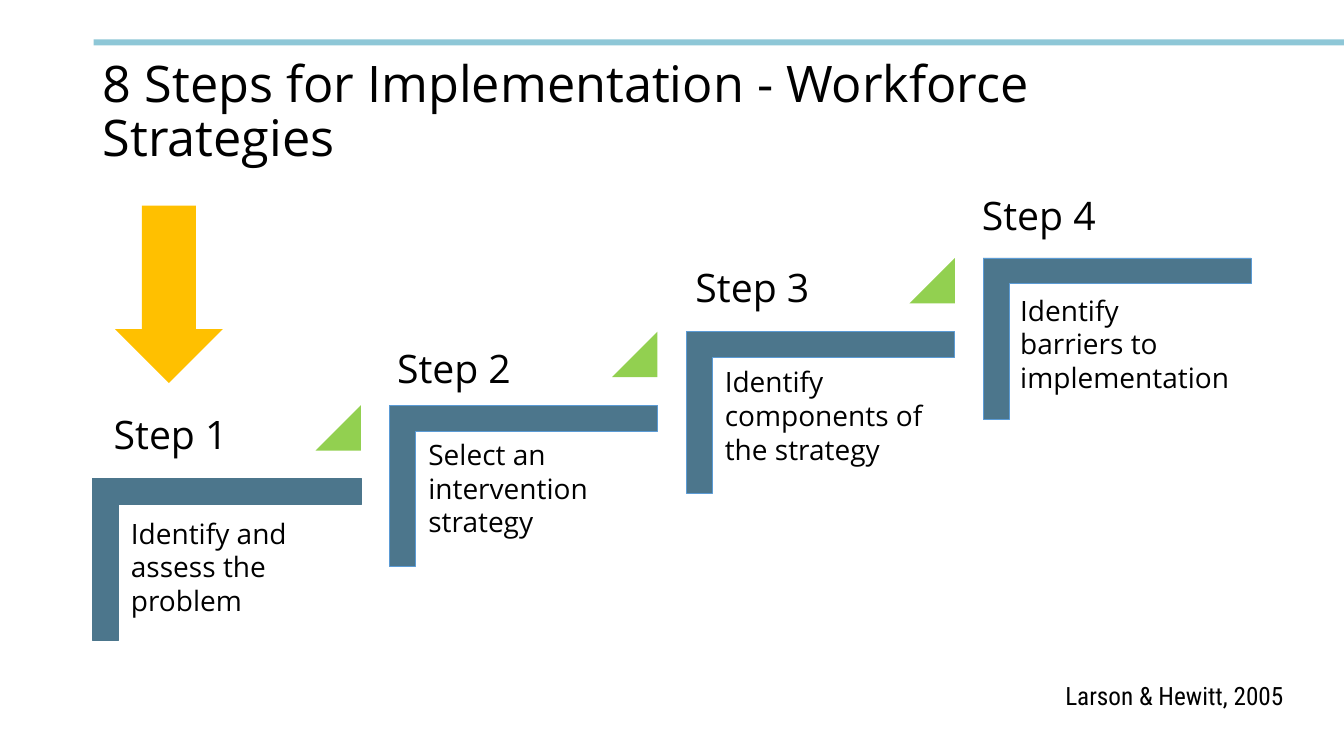
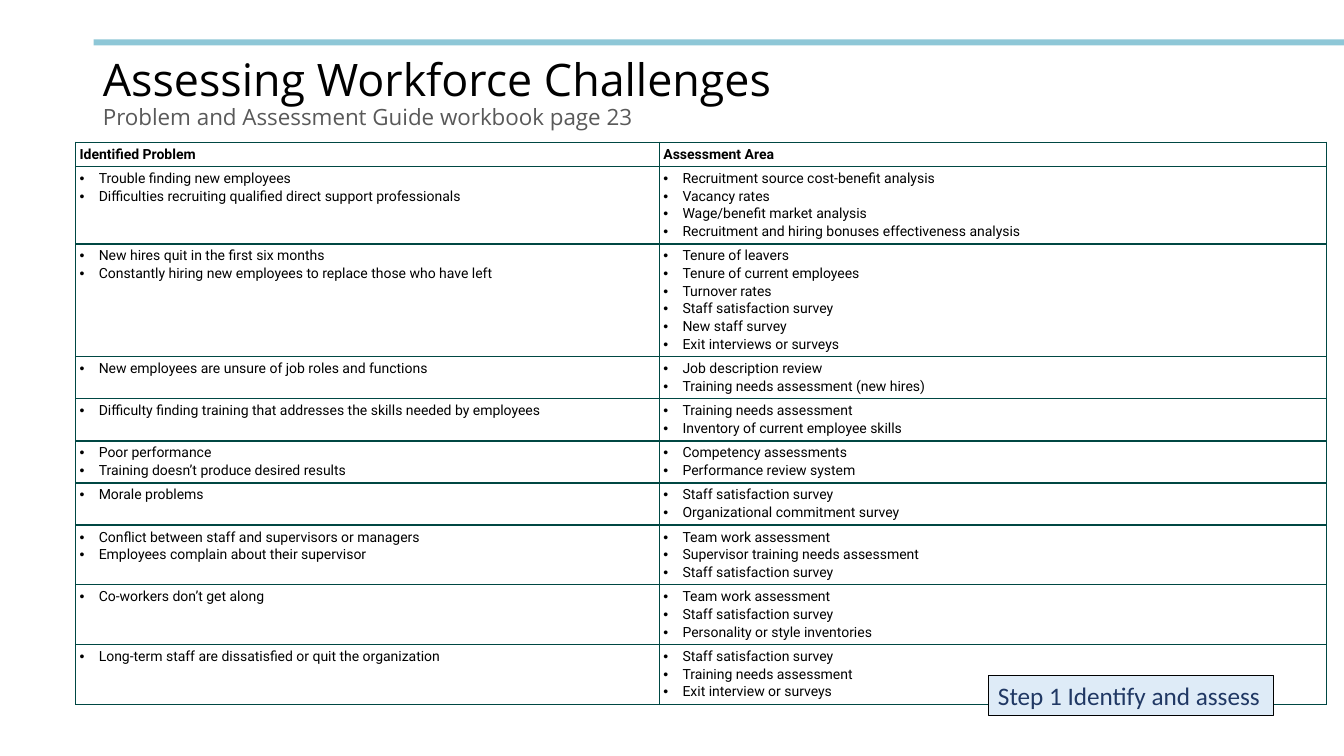
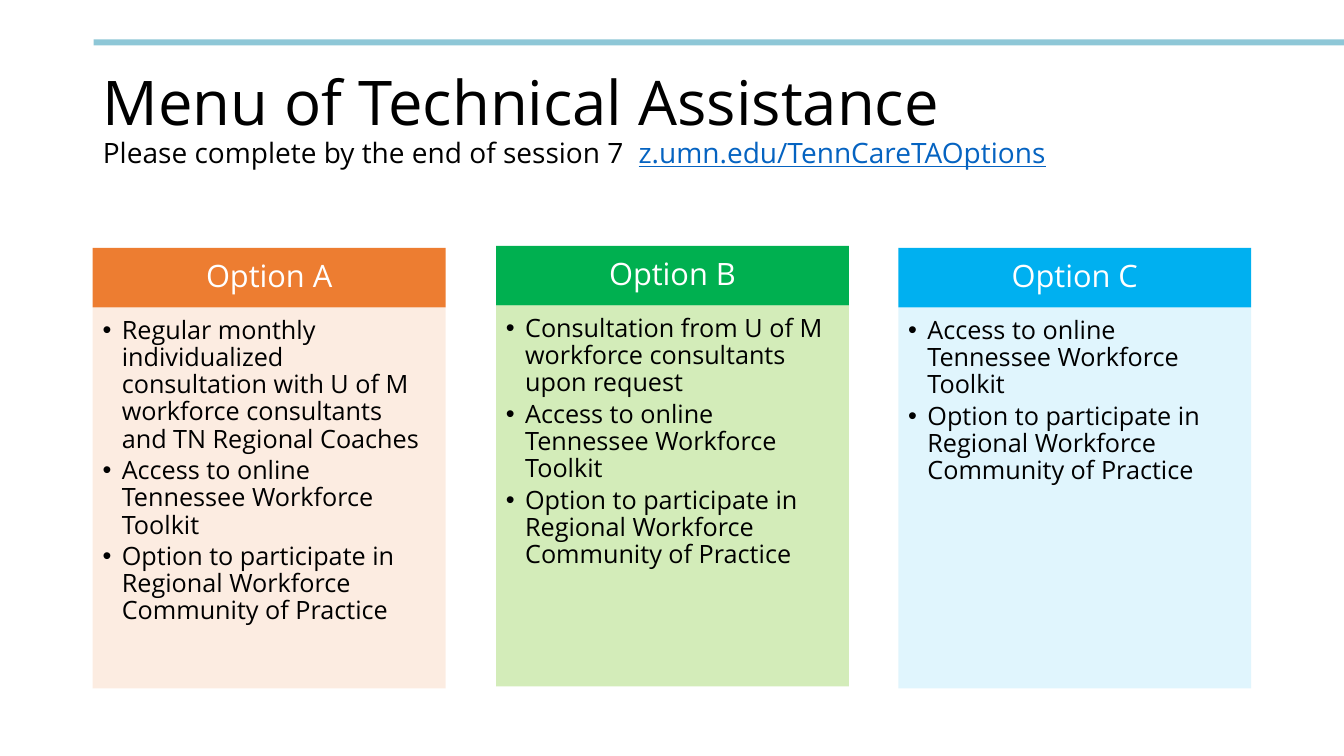
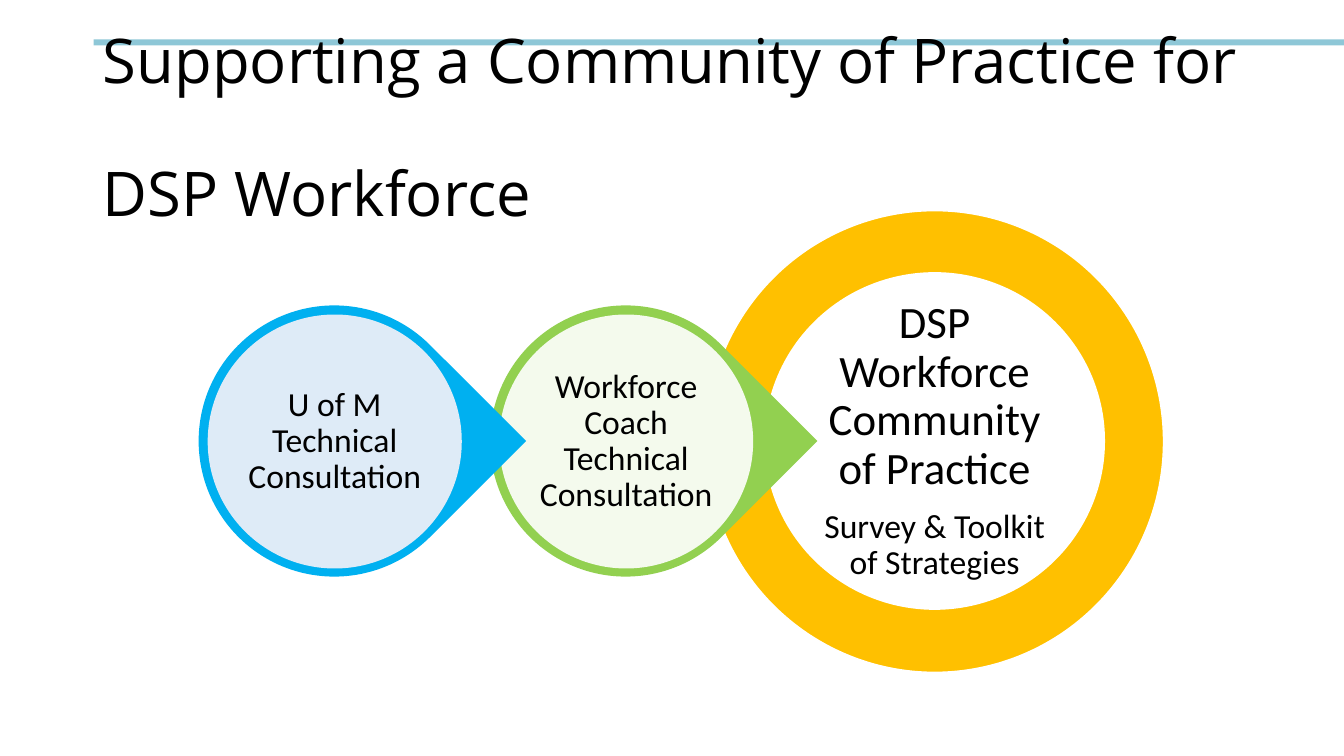
import copy

import lxml.etree
import pptx
import pptx.dml.color
import pptx.enum.shapes
import pptx.enum.text
import pptx.oxml.ns
import pptx.util

RGB = pptx.dml.color.RGBColor
SHAPE = pptx.enum.shapes.MSO_SHAPE
ALIGN = pptx.enum.text.PP_ALIGN
ANCHOR = pptx.enum.text.MSO_ANCHOR
Pt = pptx.util.Pt
qn = pptx.oxml.ns.qn

EMU_PER_PX = 9144

BLACK = RGB(0x00, 0x00, 0x00)
WHITE = RGB(0xFF, 0xFF, 0xFF)
GREY = RGB(0x59, 0x59, 0x59)
BAND_BLUE = RGB(0x8E, 0xC7, 0xD7)
STEP_BLUE = RGB(0x4C, 0x76, 0x8C)
EDGE_BLUE = RGB(0x5B, 0x9B, 0xD5)
LINK_BLUE = RGB(0x05, 0x63, 0xC1)
PALE_BLUE = RGB(0xDE, 0xEB, 0xF7)
NAVY = RGB(0x20, 0x38, 0x64)
SKY = RGB(0x00, 0xB0, 0xF0)
LIME = RGB(0x92, 0xD0, 0x50)
GREEN = RGB(0x00, 0xB0, 0x50)
ORANGE = RGB(0xED, 0x7D, 0x31)
GOLD = RGB(0xFF, 0xC0, 0x00)
TABLE_GREEN = RGB(0x00, 0x47, 0x43)

STEPS = [  # label, label place, text, text box
    ("Step 1", (103, 402), "Identify and assess the problem", (120, 507, 229)),
    ("Step 2", (384, 337), "Select an intervention strategy", (415, 429, 229)),
    ("Step 3", (680, 256), "Identify components of the strategy", (709, 357, 250)),
    ("Step 4", (964, 185), "Identify \nbarriers to implementation", (1002, 286, 239)),
]

ASSESSMENTS = [  # row height, problems, assessment areas
    (74, ["Trouble finding new employees",
          "Difficulties recruiting qualified direct support professionals"],
     ["Recruitment source cost-benefit analysis", "Vacancy rates",
      "Wage/benefit market analysis",
      "Recruitment and hiring bonuses effectiveness analysis"]),
    (108, ["New hires quit in the first six months",
           "Constantly hiring new employees to replace those who have left"],
     ["Tenure of leavers", "Tenure of current employees", "Turnover rates",
      "Staff satisfaction survey", "New staff survey", "Exit interviews or surveys"]),
    (40, ["New employees are unsure of job roles and functions"],
     ["Job description review", "Training needs assessment (new hires)"]),
    (40, ["Difficulty finding training that addresses the skills needed by employees"],
     ["Training needs assessment", "Inventory of current employee skills"]),
    (40, ["Poor performance", "Training doesn’t produce desired results"],
     ["Competency assessments", "Performance review system"]),
    (40, ["Morale problems"],
     ["Staff satisfaction survey", "Organizational commitment survey"]),
    (40, ["Conflict between staff and supervisors or managers",
          "Employees complain about their supervisor"],
     ["Team work assessment", "Supervisor training needs assessment",
      "Staff satisfaction survey"]),
    (57, ["Co-workers don’t get along"],
     ["Team work assessment", "Staff satisfaction survey",
      "Personality or style inventories"]),
    (57, ["Long-term staff are dissatisfied or quit the organization"],
     ["Staff satisfaction survey", "Training needs assessment",
      "Exit interview or surveys"]),
]

TOOLKIT = "Access to online Tennessee Workforce Toolkit"
COMMUNITY = "Option to participate in Regional Workforce Community of Practice"
OPTIONS = [  # heading, top, heading fill, body fill, body opacity, bullets
    ("Option A", 246, ORANGE, ORANGE, 14,
     ["Regular monthly individualized consultation with U of M workforce "
      "consultants and TN Regional Coaches", TOOLKIT, COMMUNITY]),
    ("Option B", 244, GREEN, LIME, 40,
     ["Consultation from U of M workforce consultants upon request",
      TOOLKIT, COMMUNITY]),
    ("Option C", 246, SKY, SKY, 12, [TOOLKIT, COMMUNITY]),
]


def px(length):
    return pptx.util.Emu(round(length * EMU_PER_PX))


def add_bullet(para):
    props = para._p.get_or_add_pPr()
    props.set("marL", str(px(19)))
    props.set("indent", str(px(-19)))
    lxml.etree.SubElement(props, qn("a:buFont"), typeface="Arial")
    lxml.etree.SubElement(props, qn("a:buChar"), char="•")


def add_span(para, text, size, font="Open Sans", color=BLACK, bold=False,
             underline=False):
    for number, line in enumerate(text.split("\n")):
        if number:
            para.add_line_break()
            # A break takes the format of the text before it.
            line_break = para._p[-1]
            line_break.append(copy.deepcopy(line_break.getprevious().find(qn("a:rPr"))))
        if line:
            span = para.add_run()
            span.text = line
            span.font.size = Pt(size)
            span.font.name = font
            span.font.color.rgb = color
            span.font.bold = bold
            span.font.underline = underline


def write(frame, paras, align=ALIGN.LEFT, anchor=ANCHOR.TOP, insets=(10, 5, 10, 5),
          line=1.0, after=0, bullet=False, wrap=True, **style):
    """Fill a frame; a paragraph is a text or a list of (text, style) spans."""
    frame.auto_size = pptx.enum.text.MSO_AUTO_SIZE.NONE
    frame.word_wrap = wrap
    frame.vertical_anchor = anchor
    (frame.margin_left, frame.margin_top,
     frame.margin_right, frame.margin_bottom) = map(px, insets)
    write_paras(frame, paras, align, line, after, bullet, **style)


def write_paras(frame, paras, align=ALIGN.LEFT, line=1.0, after=0, bullet=False, **style):
    for number, spans in enumerate(paras):
        para = frame.add_paragraph() if number else frame.paragraphs[0]
        if bullet:
            add_bullet(para)
        para.alignment = align
        para.line_spacing = line
        para.space_after = Pt(after if number < len(paras) - 1 else 0)
        for text, changes in [(spans, {})] if isinstance(spans, str) else spans:
            add_span(para, text, **{**style, **changes})


def add_box(page, kind, left, top, width, height, fill, opacity=100, edge=None,
            edge_width=1, turn=0, adjust=()):
    box = page.shapes.add_shape(kind, px(left), px(top), px(width), px(height))
    box.shadow.inherit = False
    box.rotation = turn
    for number, value in enumerate(adjust):
        box.adjustments[number] = value
    box.fill.solid()
    box.fill.fore_color.rgb = fill
    if opacity < 100:
        color = box.element.spPr.find(qn("a:solidFill"))[0]
        lxml.etree.SubElement(color, qn("a:alpha"), val=str(opacity * 1000))
    if edge is None:
        box.line.fill.background()
    else:
        box.line.color.rgb = edge
        box.line.width = Pt(edge_width)
    return box


def add_text(page, text, left, top, width, height, **style):
    box = page.shapes.add_textbox(px(left), px(top), px(width), px(height))
    write(box.text_frame, [text], **style)


def add_page(deck, title, top, height, size, width=1150):
    page = deck.slides.add_slide(deck.slide_layouts.get_by_name("Title Only"))
    box = page.shapes.title
    box.left, box.top, box.width, box.height = map(px, (92, top, width, height))
    write(box.text_frame, [title], anchor=ANCHOR.MIDDLE, line=0.9, size=size)
    return page


def share_band(page):
    """Put the top band on the layout that all pages use."""
    band = add_box(page, SHAPE.RECTANGLE, 93, 39, 1240, 6, BAND_BLUE)
    page.slide_layout.shapes.element.append(band.element)


def style_cell(cell, paras, **style):
    props = cell._tc.get_or_add_tcPr()
    for side in ("lnL", "lnR", "lnT", "lnB"):
        line = lxml.etree.SubElement(props, qn(f"a:{side}"), w=str(Pt(1)))
        fill = lxml.etree.SubElement(line, qn("a:solidFill"))
        lxml.etree.SubElement(fill, qn("a:srgbClr"), val=str(TABLE_GREEN))
    cell.fill.background()
    cell.margin_left = cell.margin_top = cell.margin_right = cell.margin_bottom = px(4)
    write_paras(cell.text_frame, paras, size=10, font="Roboto", **style)


def add_assessment_table(page):
    frame = page.shapes.add_table(len(ASSESSMENTS) + 1, 2,
                                  px(75), px(141), px(1241), px(519))
    table = frame.table
    table.horz_banding = False
    for column, width in zip(table.columns, (579, 662)):
        column.width = px(width)
    table.rows[0].height = px(23)
    for column, heading in enumerate(("Identified Problem", "Assessment Area")):
        style_cell(table.cell(0, column), [heading], bold=True)
    for row, (height, *lists) in enumerate(ASSESSMENTS, 1):
        table.rows[row].height = px(height)
        for column, items in enumerate(lists):
            style_cell(table.cell(row, column), items, bullet=True, after=1)


def build_steps(deck):
    page = add_page(deck, "8 Steps for Implementation - Workforce Strategies",
                    40, 145, 36)
    share_band(page)
    add_text(page, "Larson & Hewitt, 2005", 1004, 670, 279, 40,
             size=18, font="Roboto Condensed", align=ALIGN.RIGHT)
    for number, (label, place, text, (left, top, width)) in enumerate(STEPS):
        across, rise = round(number * 294.4), number * 73
        add_box(page, SHAPE.CORNER, 145 + across, 422 - rise, 160, 266, STEP_BLUE,
                edge=EDGE_BLUE if number else STEP_BLUE, edge_width=0.5,
                turn=90, adjust=(0.16, 0.16))
        if number < len(STEPS) - 1:
            add_box(page, SHAPE.ISOSCELES_TRIANGLE, 313 + across, 402 - rise, 45, 45,
                    LIME, adjust=(1,))
        add_text(page, label, *place, 210, 57, size=28)
        add_text(page, text, left, top, width, 111, size=20)
    add_box(page, SHAPE.DOWN_ARROW, 114, 204, 107, 176, GOLD)


def build_assessment(deck):
    title = [("Assessing Workforce Challenges \n", {}),
             ("Problem and Assessment Guide workbook page 23",
              {"size": 16, "color": GREY})]
    page = add_page(deck, title, 40, 107, 32, width=1166)
    add_assessment_table(page)
    callout = add_box(page, SHAPE.RECTANGLE, 980, 670, 283, 40, PALE_BLUE,
                      edge=BLACK, edge_width=0.75)
    write(callout.text_frame, ["Step 1 Identify and assess"], wrap=False,
          size=18, font="Calibri", color=NAVY)


def build_options(deck):
    title = [("Menu of Technical Assistance\n", {}),
             ("Please complete by the end of session 7  ", {"size": 20}),
             ("z.umn.edu/TennCareTAOptions",
              {"size": 20, "color": LINK_BLUE, "underline": True})]
    page = add_page(deck, title, 20, 200, 44)
    for number, (heading, top, head_fill, body_fill, opacity, items) in enumerate(OPTIONS):
        left = round(92 + number * 399.5)
        head = add_box(page, SHAPE.RECTANGLE, left, top, 350, 59, head_fill)
        write(head.text_frame, [heading], align=ALIGN.CENTER, anchor=ANCHOR.MIDDLE,
              insets=(17, 10, 17, 10), line=0.9, size=22, color=WHITE)
        body = add_box(page, SHAPE.RECTANGLE, left, top + 59, 350, 378, body_fill, opacity)
        write(body.text_frame, items, insets=(10, 10, 14, 16), line=0.9, after=3,
              bullet=True, size=18)


def add_circle(page, left, top, width, height, paras, fill, opacity=100):
    circle = add_box(page, SHAPE.OVAL, left, top, width, height, fill, opacity)
    write(circle.text_frame, paras, align=ALIGN.CENTER, anchor=ANCHOR.MIDDLE,
          insets=(0, 0, 0, 0), line=0.9, after=11, size=24, font="Calibri")


def build_community(deck):
    page = add_page(deck, "Supporting a Community of Practice for \nDSP Workforce",
                    40, 179, 44)
    add_box(page, SHAPE.OVAL, 700, 209, 454, 458, GOLD, edge=WHITE)
    add_circle(page, 758, 270, 338, 335,
               [[("DSP Workforce Community of Practice", {"size": 32})],
                "Survey & Toolkit of Strategies"], WHITE)
    for left, text, rim, fill, opacity in (
            (486, "Workforce Coach Technical Consultation", LIME, WHITE, 90),
            (197, "U of M Technical Consultation", SKY, PALE_BLUE, 100)):
        add_box(page, SHAPE.TEAR, left, 303, 269, 269, rim, turn=45, adjust=(1,))
        add_circle(page, left + 9, 312, 252, 252, [text], fill, opacity)


def main():
    deck = pptx.Presentation()
    deck.slide_width, deck.slide_height = px(1333), px(750)
    build_steps(deck)
    build_assessment(deck)
    build_options(deck)
    build_community(deck)
    deck.save("out.pptx")


if __name__ == "__main__":
    main()
